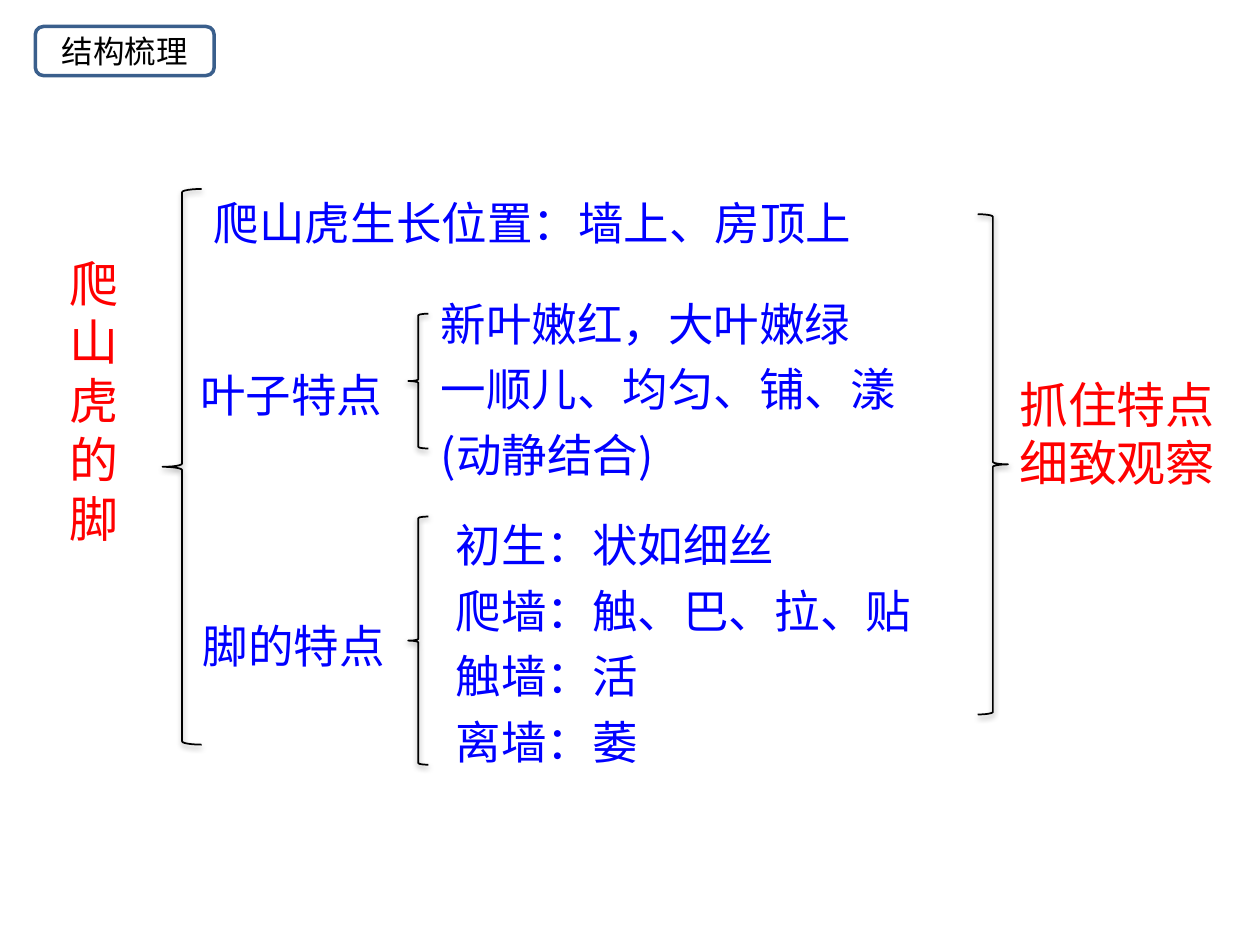
import lxml.etree
import pptx
import pptx.dml.color
import pptx.enum.shapes
import pptx.enum.text
import pptx.oxml
import pptx.oxml.ns
import pptx.util

THEME = {
    "font": "Noto Sans CJK SC",
    "black": pptx.dml.color.RGBColor.from_string("000000"),
    "red": pptx.dml.color.RGBColor.from_string("FF0000"),
    "blue": pptx.dml.color.RGBColor.from_string("0000FF"),
    "border": pptx.dml.color.RGBColor.from_string("3A5F8C"),
    "label": pptx.util.Pt(18),
    "body": pptx.util.Pt(26),
    "heading": pptx.util.Pt(28),
}
SHADOW = (
    f'<a:effectLst {pptx.oxml.ns.nsdecls("a")}>'
    '<a:outerShdw blurRad="40000" dist="20000" dir="5400000" rotWithShape="0">'
    '<a:srgbClr val="000000"><a:alpha val="38000"/></a:srgbClr>'
    '</a:outerShdw></a:effectLst>'
)

presentation = pptx.Presentation()
presentation.slide_width = pptx.util.Inches(10)
presentation.slide_height = pptx.util.Inches(7.5)
slide = presentation.slides.add_slide(presentation.slide_layouts[6])
COLUMN = presentation.slide_width / 100
ROW = presentation.slide_height / 75


def place(left, top, width, height):
    """Turn columns and rows of the 100 by 75 grid into slide lengths."""
    return [round(left * COLUMN), round(top * ROW), round(width * COLUMN), round(height * ROW)]


def write_lines(text_frame, lines, color, size, paragraph_format):
    for index, line in enumerate(lines):
        paragraph = text_frame.paragraphs[0] if index == 0 else text_frame.add_paragraph()
        for name, value in paragraph_format.items():
            setattr(paragraph, name, value)
        run = paragraph.add_run()
        run.text = line
        run.font.color.rgb = THEME[color]
        for name, value in {"name": THEME["font"], "size": THEME[size]}.items():
            setattr(run.font, name, value)
        east_asian = lxml.etree.SubElement(run.font._element, pptx.oxml.ns.qn("a:ea"))
        east_asian.set("typeface", THEME["font"])


# Section label
label = slide.shapes.add_shape(
    pptx.enum.shapes.MSO_SHAPE.ROUNDED_RECTANGLE, *place(2.8, 2.1, 14.2, 3.9))
label.shadow.inherit = False
label.fill.background()
label.line.color.rgb = THEME["border"]
label.line.width = pptx.util.Pt(2)
label.text_frame.vertical_anchor = pptx.enum.text.MSO_ANCHOR.MIDDLE
write_lines(label.text_frame, ["结构梳理"], "black", "label",
            {"alignment": pptx.enum.text.PP_ALIGN.CENTER})

# Braces: grid place, rotation
braces = [
    ((12.9, 15, 3.1, 44.1), 0),
    ((32.4, 24.9, 1.6, 10.7), 0),
    ((32.4, 41, 1.6, 19.7), 0),
    ((77.6, 17, 2.4, 39.7), 180),
]
for box, rotation in braces:
    brace = slide.shapes.add_shape(pptx.enum.shapes.MSO_SHAPE.LEFT_BRACE, *place(*box))
    brace.rotation = rotation
    brace.fill.background()
    brace.line.color.rgb = THEME["black"]
    brace.line.width = pptx.util.Pt(1)
    brace._element.spPr.append(pptx.oxml.parse_xml(SHADOW))

# Texts: grid place, lines, colour, size, line spacing, word wrap
texts = [
    ((4.5, 19.6, 6, 24.6), list("爬山虎的脚"), "red", "heading", 1.0, False),
    ((16, 12.8, 55.3, 7.6), ["爬山虎生长位置：墙上、房顶上"], "blue", "body", 1.5, True),
    ((14.9, 26.5, 16.6, 7.6), ["叶子特点"], "blue", "body", 1.5, True),
    ((34, 22.1, 41.8, 16.1), ["新叶嫩红，大叶嫩绿", "一顺儿、均匀、铺、漾", "(动静结合)"],
     "blue", "body", 1.2, True),
    ((15.1, 47.7, 16.6, 6.3), ["脚的特点"], "blue", "body", 1.2, True),
    ((35.2, 39.7, 43.6, 22), ["初生：状如细丝", "爬墙：触、巴、拉、贴", "触墙：活", "离墙：萎"],
     "blue", "body", 1.2, True),
    ((79.9, 29.2, 19.4, 10.4), ["抓住特点", "细致观察"], "red", "heading", 1.0, True),
]
for box, lines, color, size, spacing, wrap in texts:
    text_frame = slide.shapes.add_textbox(*place(*box)).text_frame
    frame_format = {
        "word_wrap": wrap,
        "auto_size": pptx.enum.text.MSO_AUTO_SIZE.SHAPE_TO_FIT_TEXT,
    }
    for name, value in frame_format.items():
        setattr(text_frame, name, value)
    write_lines(text_frame, lines, color, size, {"line_spacing": spacing})

presentation.save("out.pptx")
